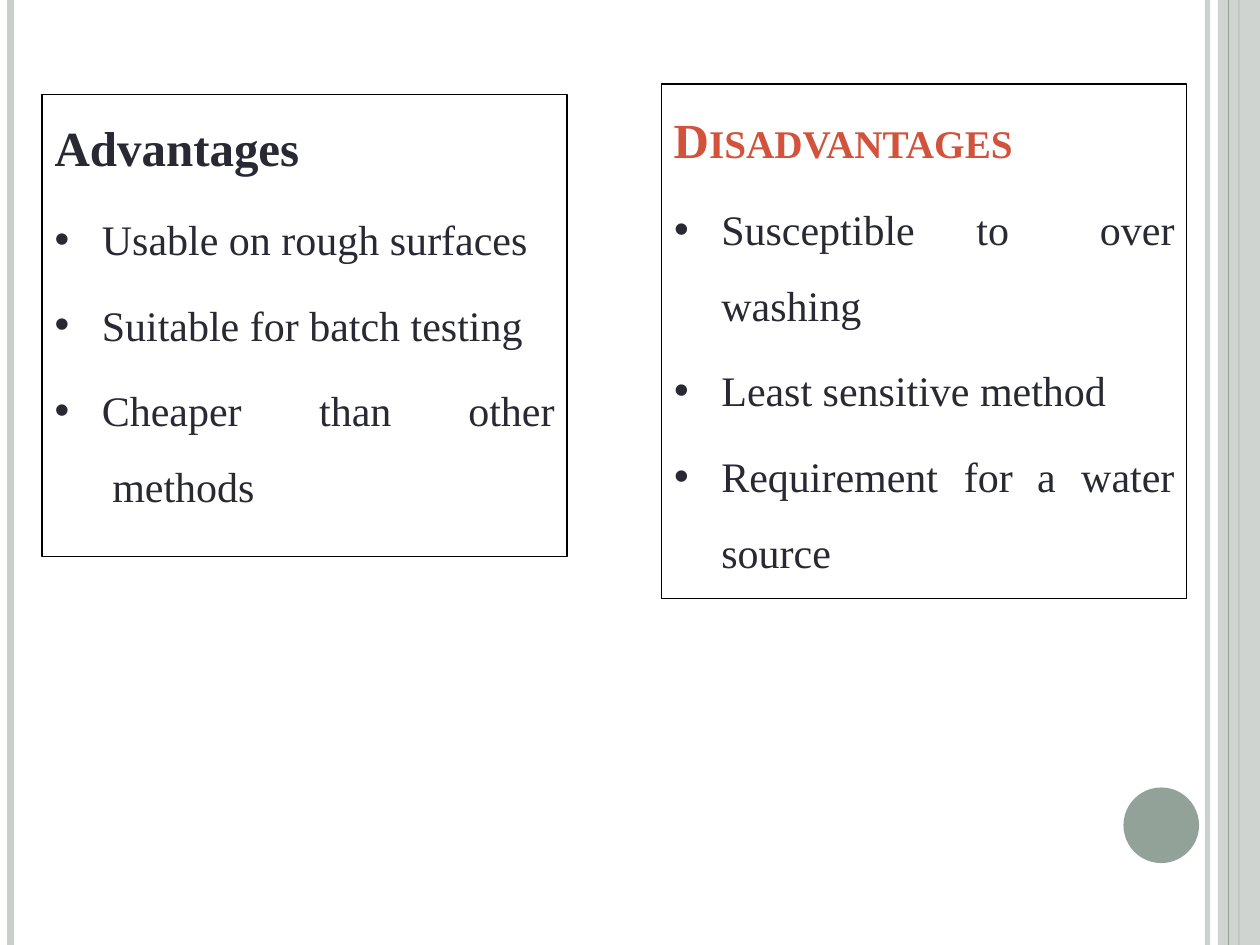
from dataclasses import dataclass

from lxml import etree
from pptx import Presentation
from pptx.dml.color import RGBColor
from pptx.enum import shapes, text
from pptx.oxml.ns import qn
from pptx.util import Pt


@dataclass(frozen=True)
class Theme:
    font: str = "Times New Roman"
    ink: str = "292934"
    accent: str = "D2533C"
    border: str = "000000"
    sage: str = "93A299"
    pale: str = "C8CECA"
    heading: int = 28
    body: int = 24


def sub(parent, tag, **attributes):
    return etree.SubElement(parent, qn(tag), attributes)


class SlideBuilder:
    def __init__(self, slide, theme):
        self.shapes = slide.shapes
        self.theme = theme

    def set_alpha(self, element, percent):
        if percent < 100:
            color = next(element.iter(qn("a:srgbClr")))
            sub(color, "a:alpha", val=str(percent * 1000))

    def rule(self, x, color, weight, alpha=100):
        """Vertical line over the full slide height."""
        line = self.shapes.add_connector(
            shapes.MSO_CONNECTOR.STRAIGHT, Pt(x), 0, Pt(x), Pt(540))
        line.line.color.rgb = RGBColor.from_string(color)
        line.line.width = Pt(weight)
        properties = line._element.spPr
        self.set_alpha(properties, alpha)
        sub(properties, "a:effectLst")

    def shape(self, kind, box, fill=None, border=None, alpha=100):
        shape = self.shapes.add_shape(kind, *map(Pt, box))
        shape.shadow.inherit = False
        if fill:
            shape.fill.solid()
            shape.fill.fore_color.rgb = RGBColor.from_string(fill)
            self.set_alpha(shape._element.spPr, alpha)
        else:
            shape.fill.background()
        if border:
            shape.line.color.rgb = RGBColor.from_string(border)
            shape.line.width = Pt(0.75)
        else:
            shape.line.fill.background()

    def text_frame(self, box):
        frame = self.shapes.add_textbox(*map(Pt, box)).text_frame
        frame.word_wrap = True
        frame.margin_left = frame.margin_right = frame.margin_bottom = 0
        frame.margin_top = Pt(1)
        frame.vertical_anchor = text.MSO_ANCHOR.TOP
        return frame

    def style(self, paragraph, size, color, bold=False, small_caps=False):
        for run in paragraph.runs:
            run.font.name = self.theme.font
            run.font.size = Pt(size)
            run.font.bold = bold
            run.font.color.rgb = RGBColor.from_string(color)
            if small_caps:
                run._r.get_or_add_rPr().set("cap", "small")

    def heading(self, wording, box, color, small_caps=False):
        paragraph = self.text_frame(box).paragraphs[0]
        paragraph.text = wording
        paragraph.space_before = Pt(1)
        self.style(paragraph, self.theme.heading, color, True, small_caps)

    def body(self, box, items):
        """Items are (wording, space before, line spacing, tab stops, bulleted)."""
        frame = self.text_frame(box)
        frame.text = "\n".join(item[0] for item in items)
        for paragraph, item in zip(frame.paragraphs, items):
            _, before, spacing, stops, bulleted = item
            paragraph.space_before = Pt(before)
            paragraph.line_spacing = spacing
            self.style(paragraph, self.theme.body, self.theme.ink)
            properties = paragraph._p.get_or_add_pPr()
            if bulleted is not None:
                properties.set("marL", str(Pt(27)))
                properties.set("indent", str(Pt(-27 if bulleted else 0)))
            if bulleted:
                sub(properties, "a:buFont", typeface="Arial")
                sub(properties, "a:buChar", char="•")
            if stops:
                tabs = sub(properties, "a:tabLst")
                for stop in stops:
                    sub(tabs, "a:tab", pos=str(Pt(stop)), algn="l")


def main():
    deck = Presentation()
    deck.slide_width, deck.slide_height = Pt(720), Pt(540)
    theme = Theme()
    page = SlideBuilder(deck.slides.add_slide(deck.slide_layouts[6]), theme)
    rectangle = shapes.MSO_SHAPE.RECTANGLE

    # Side decoration
    page.rule(690, theme.pale, 3, alpha=93)
    page.rule(6, theme.pale, 4.5)
    page.rule(708, theme.sage, 1.5)
    page.shape(rectangle, (696, 0, 24, 540), fill=theme.pale, alpha=87)
    page.rule(702, theme.sage, 0.75)
    page.shape(shapes.MSO_SHAPE.OVAL, (642, 450, 43.2, 43.2), fill=theme.sage)

    # Advantages
    page.shape(rectangle, (24, 54, 300, 264), border=theme.border)
    page.heading("Advantages", (31.2, 66, 150, 35), theme.ink)
    page.body((31.2, 121, 288, 172), [
        ("Usable on rough surfaces", 1, 1, (), True),
        ("Suitable for batch testing", 20.2, 1, (), True),
        ("Cheaper\tthan\tother\v methods", 5.7, 1.5, (151.2, 236.4), True),
    ])

    # Disadvantages
    page.shape(rectangle, (378, 48, 300, 294), border=theme.border)
    page.heading("Disadvantages", (385, 61.5, 216, 35), theme.accent,
                 small_caps=True)
    page.body((628.5, 115.5, 46, 31), [("over", 1, 1, (), None)])
    page.body((385.2, 101, 202, 88.5), [
        ("Susceptible\tto\vwashing", 1, 1.5, (172.8,), True),
    ])
    page.body((385.2, 207.5, 292, 123), [
        ("Least sensitive method", 1, 1, (), True),
        ("Requirement\tfor\ta\twater", 20.1, 1, (165.6, 207.4, 232.6), True),
        ("source", 14.4, 1, (), False),
    ])

    deck.save("out.pptx")


if __name__ == "__main__":
    main()
